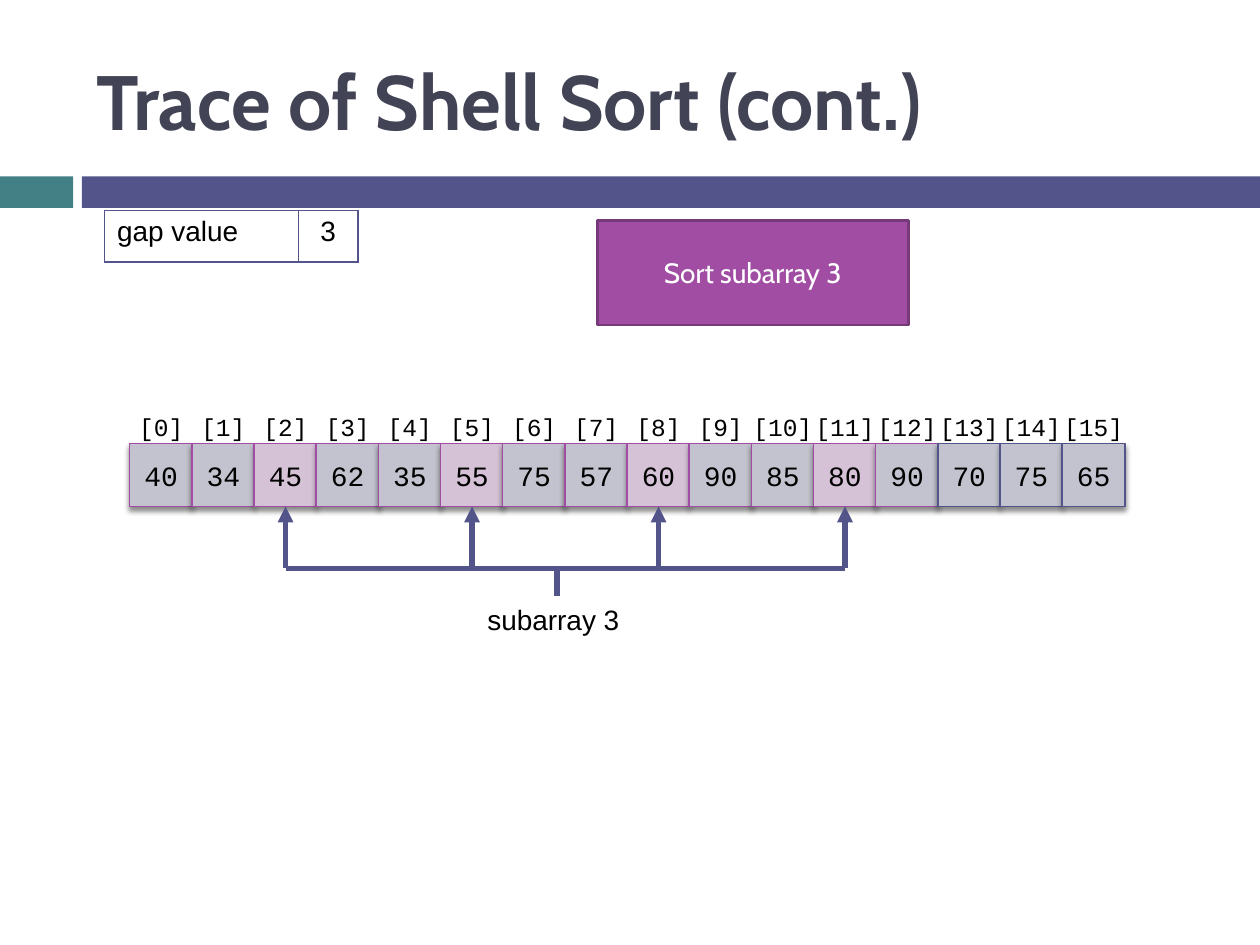
from lxml.etree import SubElement
from pptx import Presentation
from pptx.dml.color import RGBColor as RGB
from pptx.enum.shapes import MSO_CONNECTOR as LINK, MSO_SHAPE as SHAPE
from pptx.enum.text import MSO_ANCHOR as ANCHOR, PP_ALIGN as ALIGN
from pptx.oxml.ns import qn
from pptx.util import Pt

COLORS = {
    "teal": "438086", "blue": "53548A", "title": "424456",
    "plum": "A04DA3", "edge": "763979", "gray": "C3C3CF",
    "pink": "D6C2D7", "black": "000000", "white": "FFFFFF",
}
VALUES = [40, 34, 45, 62, 35, 55, 75, 57, 60, 90, 85, 80, 90, 70, 75, 65]
PICKED = [2, 5, 8, 11]
LEFT, PITCH, SIDE = 74.16, 35.52, 36


def color(name):
    return RGB.from_string(COLORS[name])


def write(frame, text, size, font, tone="black", align=ALIGN.LEFT, bold=False):
    frame.word_wrap = True
    para = frame.paragraphs[0]
    para.text = text
    para.alignment = align
    para.font.size = Pt(size)
    para.font.name = font
    para.font.bold = bold
    para.font.color.rgb = color(tone)


def add_text(slide, box, *args, anchor=ANCHOR.TOP, **style):
    frame = slide.shapes.add_textbox(*map(Pt, box)).text_frame
    frame.vertical_anchor = anchor
    write(frame, *args, **style)


def add_rect(slide, box, fill, edge=None, width=0.79):
    rect = slide.shapes.add_shape(SHAPE.RECTANGLE, *map(Pt, box))
    rect.shadow.inherit = False
    rect.fill.solid()
    rect.fill.fore_color.rgb = color(fill)
    if edge:
        rect.line.color.rgb = color(edge)
        rect.line.width = Pt(width)
    else:
        rect.line.fill.background()
    rect.text_frame.vertical_anchor = ANCHOR.MIDDLE
    return rect


def add_shadow(shape):
    effects = shape._element.spPr.find(qn("a:effectLst"))
    outer = SubElement(effects, qn("a:outerShdw"), blurRad=str(Pt(3)),
                       dist=str(Pt(2.4)), dir="5400000", rotWithShape="0")
    shade = SubElement(outer, qn("a:srgbClr"), val=COLORS["black"])
    SubElement(shade, qn("a:alpha"), val="45000")


def add_line(slide, start, end, arrow=False):
    """Draw a thick line, with an arrowhead at its start if asked."""
    line = slide.shapes.add_connector(LINK.STRAIGHT, *map(Pt, start + end))
    line.line.color.rgb = color("blue")
    line.line.width = Pt(3)
    if arrow:
        SubElement(line.line._get_or_add_ln(), qn("a:headEnd"), type="triangle")
    SubElement(line._element.spPr, qn("a:effectLst"))


def add_header(slide, top, height):
    add_rect(slide, (0, top, 41.76, height), "teal")
    add_rect(slide, (46.8, top, 673.2, height), "blue")
    add_text(slide, (48.24, top - 82.8, 642.24, 77.76),
             "Trace of Shell Sort (cont.)", 44, "Cabin", "title",
             bold=True, anchor=ANCHOR.MIDDLE)


def add_array(slide, left, top):
    """Place the row of values with their indexes above."""
    for i, value in enumerate(VALUES):
        cell = add_rect(slide, (left + i * PITCH, top, SIDE, SIDE),
                        "pink" if i in PICKED else "gray",
                        "plum" if i < 13 else "blue")
        add_shadow(cell)
        write(cell.text_frame, str(value), 16, "Courier New", align=ALIGN.CENTER)
    wide = 57.6
    for i in range(len(VALUES)):
        mid = left + i * PITCH + SIDE / 2
        add_text(slide, (mid - wide / 2, top - 21.6, wide, 24.48),
                 f"[{i}]", 14, "Courier New", align=ALIGN.CENTER)


def add_gap(slide, left, top):
    """Place the table that holds the gap value."""
    widths, height = (110.88, 33.84), 29.52
    table = slide.shapes.add_table(
        1, 2, Pt(left), Pt(top), Pt(sum(widths)), Pt(height)).table
    table.first_row = table.horz_banding = False
    table.rows[0].height = Pt(height)
    items = (("gap value", ALIGN.LEFT), ("3", ALIGN.CENTER))
    for i, (text, align) in enumerate(items):
        table.columns[i].width = Pt(widths[i])
        cell = table.cell(0, i)
        write(cell.text_frame, text, 16, "Arial", align=align)
        props = cell._tc.get_or_add_tcPr()
        for tag in ("a:lnL", "a:lnR", "a:lnT", "a:lnB"):
            line = SubElement(props, qn(tag), w=str(Pt(1)))
            fill = SubElement(line, qn("a:solidFill"))
            SubElement(fill, qn("a:srgbClr"), val=COLORS["blue"])
        cell.fill.background()


def add_step(slide, box):
    rect = add_rect(slide, box, "plum", "edge", 1.5)
    write(rect.text_frame, "Sort subarray 3", 16, "Cabin", "white", ALIGN.CENTER)


def add_bracket(slide, left, top):
    """Point from the subarray name up to its cells."""
    base, stem = top + 35.28, 318.24
    mids = [left + i * PITCH + SIDE / 2 for i in PICKED]
    for mid in mids:
        add_line(slide, (mid, top), (mid, base), arrow=True)
    add_line(slide, (mids[0], base), (mids[-1], base))
    add_line(slide, (stem, base), (stem, base + 15.84))
    add_text(slide, (271.44, base + 15.84, 182.16, 26.64),
             "subarray 3", 16, "Arial")


def main():
    deck = Presentation()
    deck.slide_width, deck.slide_height = Pt(720), Pt(540)
    slide = deck.slides.add_slide(deck.slide_layouts[6])
    row = 253.44
    add_header(slide, 100.8, 18)
    add_array(slide, LEFT, row)
    add_gap(slide, 59.76, 120.24)
    add_step(slide, (341.28, 126, 177.84, 59.76))
    add_bracket(slide, LEFT, row + SIDE)
    deck.save("out.pptx")


if __name__ == "__main__":
    main()
